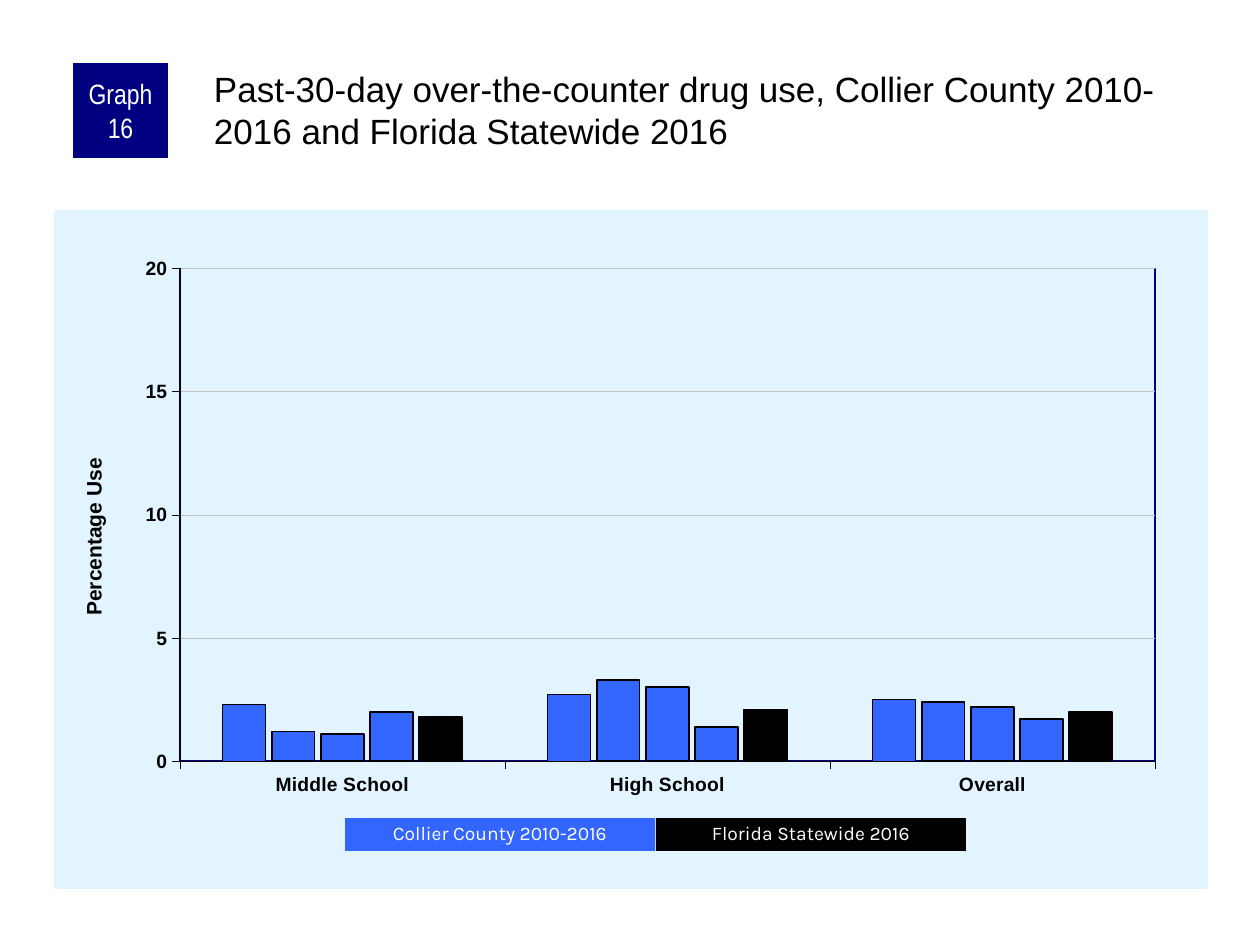
import dataclasses
import pptx
import pptx.util
import pptx.chart.data
import pptx.dml.color
import pptx.enum.chart
import pptx.enum.shapes
import pptx.enum.text
import pptx.oxml
import pptx.oxml.ns

SCALE = 914400 / 126
INK = {"navy": "000080", "blue": "3366FF", "black": "000000",
       "white": "FFFFFF", "pale": "E1F4FF", "grid": "C0C0C0"}
LABELS = ["Middle School", "High School", "Overall"]


@dataclasses.dataclass
class Box:
    text: str
    left: int
    top: int
    width: int
    height: int
    fill: str
    font: str
    size: int
    inset: int
    pad: int
    space: float


@dataclasses.dataclass
class Bars:
    vals: list[float]
    fill: str
    line: float


BOXES = [
    Box("Graph 16", 73, 63, 95, 95, "navy", "Arial Narrow", 16, 6, 0, 1.0),
    Box("Collier County 2010-2016", 345, 818, 310, 33, "blue", "Karla", 11, 13, 6, 0.9),
    Box("Florida Statewide 2016", 656, 818, 310, 33, "black", "Karla", 11, 13, 6, 0.9),
]
SERIES = [
    Bars([2.3, 2.7, 2.5], "blue", 0.75),
    Bars([1.2, 3.3, 2.4], "blue", 1),
    Bars([1.1, 3, 2.2], "blue", 1),
    Bars([2, 1.4, 1.7], "blue", 1),
    Bars([1.8, 2.1, 2], "black", 1),
]


def px(count: int) -> int:
    return round(count * SCALE)


def rgb(name: str) -> pptx.dml.color.RGBColor:
    return pptx.dml.color.RGBColor.from_string(INK[name])


def paint(font, face: str, size: int, name: str, bold: bool = False) -> None:
    font.name = face
    font.size = pptx.util.Pt(size)
    font.bold = bold
    font.color.rgb = rgb(name)


def stroke(line, name: str, width: float) -> None:
    line.color.rgb = rgb(name)
    line.width = pptx.util.Pt(width)


def parse(body: str):
    space = pptx.oxml.ns.nsdecls("c", "a")
    tag, rest = body.split(">", 1)
    return pptx.oxml.parse_xml(f"{tag} {space}>{rest}")


def place(node, parts: dict[str, float], inner: bool = False) -> None:
    old = node.find(pptx.oxml.ns.qn("c:layout"))
    target = '<c:layoutTarget val="inner"/>' if inner else ""
    modes = "".join(f'<c:{key}Mode val="edge"/>' for key in "xy")
    sizes = "".join(f'<c:{key} val="{val}"/>' for key, val in parts.items())
    new = parse(f"<c:layout><c:manualLayout>{target}{modes}{sizes}"
                "</c:manualLayout></c:layout>")
    if old is None:
        node.insert(0, new)
    else:
        node.replace(old, new)


def draw_box(slide, box: Box) -> None:
    shape = slide.shapes.add_shape(
        pptx.enum.shapes.MSO_SHAPE.RECTANGLE,
        px(box.left), px(box.top), px(box.width), px(box.height))
    shape.shadow.inherit = False
    shape.fill.solid()
    shape.fill.fore_color.rgb = rgb(box.fill)
    shape.line.fill.background()
    frame = shape.text_frame
    frame.word_wrap = True
    frame.vertical_anchor = pptx.enum.text.MSO_ANCHOR.MIDDLE
    frame.margin_left = frame.margin_right = px(box.inset)
    frame.margin_top = frame.margin_bottom = px(box.pad)
    para = frame.paragraphs[0]
    para.alignment = pptx.enum.text.PP_ALIGN.CENTER
    para.line_spacing = box.space
    run = para.add_run()
    run.text = box.text
    paint(run.font, box.font, box.size, "white")


def draw_head(slide) -> None:
    frame = slide.shapes.add_textbox(px(210), px(63), px(998), px(105)).text_frame
    frame.word_wrap = True
    frame.margin_left = frame.margin_top = px(4)
    frame.margin_right = frame.margin_bottom = 0
    run = frame.paragraphs[0].add_run()
    run.text = ("Past-30-day over-the-counter drug use, "
                "Collier County 2010-2016 and Florida Statewide 2016")
    paint(run.font, "Arial", 20, "black")


def draw_chart(slide) -> None:
    data = pptx.chart.data.CategoryChartData()
    data.categories = LABELS
    for rank, bars in enumerate(SERIES, 1):
        data.add_series(f"Series {rank}", bars.vals)
    kind = pptx.enum.chart.XL_CHART_TYPE.COLUMN_CLUSTERED
    chart = slide.shapes.add_chart(
        kind, px(54), px(210), px(1154), px(679), data).chart
    chart.has_title = False
    chart.has_legend = False
    paint(chart.font, "Arial", 8, "black")

    plot = chart.plots[0]
    plot.gap_width = 200
    plot.overlap = -15
    plot.vary_by_categories = False
    for item, bars in zip(plot.series, SERIES):
        item.smooth = False if hasattr(item, "smooth") else None
        item.invert_if_negative = False
        item.format.fill.solid()
        item.format.fill.fore_color.rgb = rgb(bars.fill)
        stroke(item.format.line, "black", bars.line)

    for axis in (chart.category_axis, chart.value_axis):
        axis.major_tick_mark = pptx.enum.chart.XL_TICK_MARK.OUTSIDE
        axis.minor_tick_mark = pptx.enum.chart.XL_TICK_MARK.NONE
        paint(axis.tick_labels.font, "Arial", 11, "black", True)
        stroke(axis.format.line, "black", 0.25)
    axis = chart.value_axis
    axis.minimum_scale, axis.maximum_scale, axis.major_unit = 0, 20, 5
    axis.has_major_gridlines = True
    stroke(axis.major_gridlines.format.line, "grid", 0.25)
    title = axis.axis_title
    run = title.text_frame.paragraphs[0].add_run()
    run.text = "Percentage Use"
    paint(run.font, "Arial", 12, "black", True)
    title.text_frame._txBody.bodyPr.set("rot", "-5400000")
    title.text_frame._txBody.bodyPr.set("vert", "horz")
    place(title._element, {"x": 0.02, "y": 0.36})

    root = chart._chartSpace
    area = root.chart.plotArea
    place(area, {"x": 0.109, "y": 0.086, "w": 0.845, "h": 0.726}, True)
    area.append(parse(
        '<c:spPr><a:noFill/><a:ln w="12700"><a:solidFill>'
        f'<a:srgbClr val="{INK["navy"]}"/></a:solidFill></a:ln></c:spPr>'))
    root.chart.addnext(parse(
        f'<c:spPr><a:solidFill><a:srgbClr val="{INK["pale"]}"/></a:solidFill>'
        '<a:ln><a:noFill/></a:ln></c:spPr>'))


def main() -> None:
    deck = pptx.Presentation()
    deck.slide_width, deck.slide_height = px(1260), px(945)
    slide = deck.slides.add_slide(deck.slide_layouts[6])
    draw_chart(slide)
    draw_head(slide)
    for box in BOXES:
        draw_box(slide, box)
    deck.save("out.pptx")


if __name__ == "__main__":
    main()
